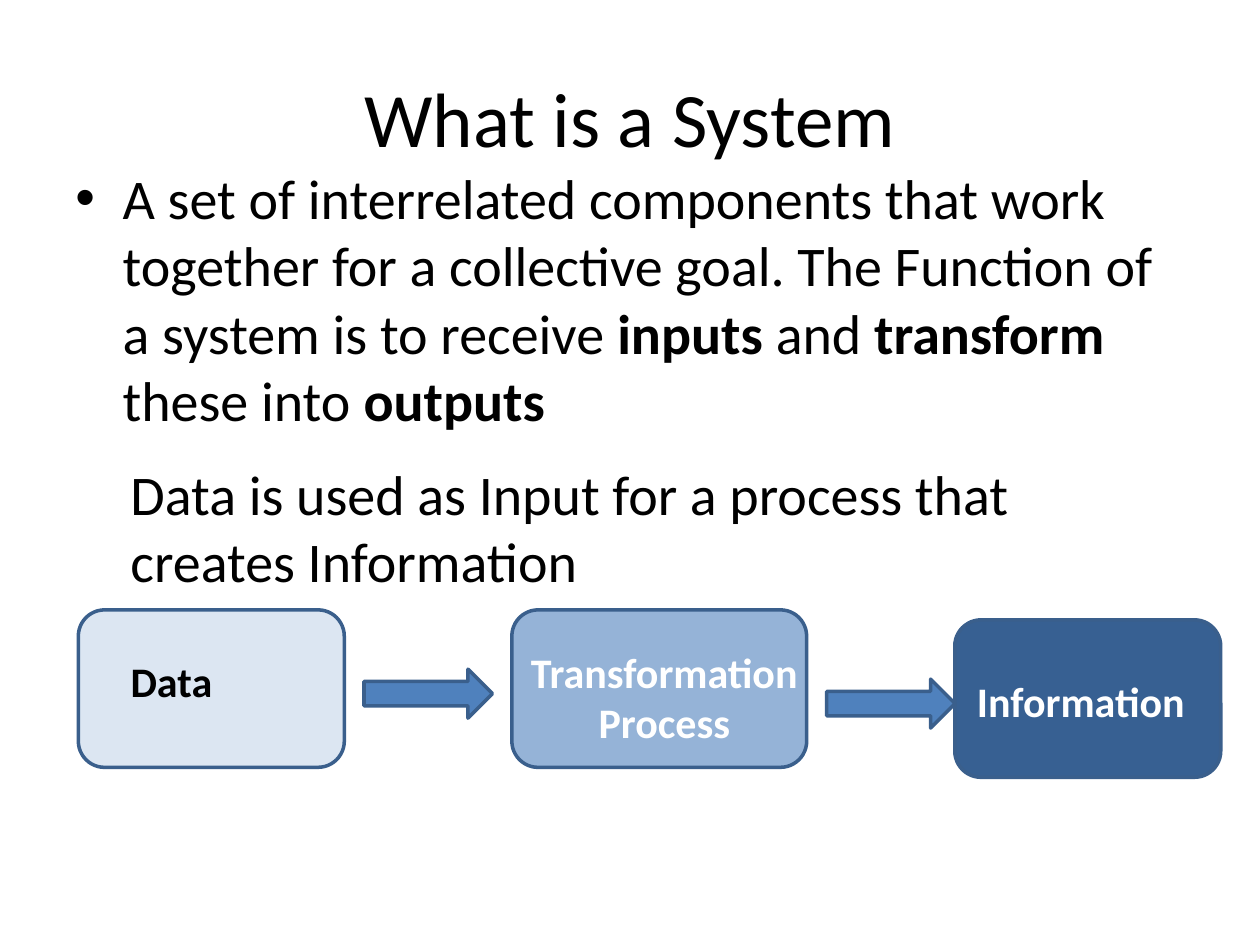
from dataclasses import dataclass

from lxml import etree
from pptx import Presentation
from pptx import util as u
from pptx.dml.color import RGBColor
from pptx.enum import shapes, text
from pptx.oxml.ns import qn

COLOURS = {
    "ink": "000000",
    "light": "FFFFFF",
    "outline": "3A5F8C",
    "arrow": "4F81BD",
    "data": "DCE6F2",
    "process": "95B3D7",
    "information": "376092",
}
LEFT, CENTRE = text.PP_ALIGN.LEFT, text.PP_ALIGN.CENTER
TOP, MIDDLE = text.MSO_ANCHOR.TOP, text.MSO_ANCHOR.MIDDLE
ROUNDED = shapes.MSO_SHAPE.ROUNDED_RECTANGLE
ARROW = shapes.MSO_SHAPE.RIGHT_ARROW


@dataclass(frozen=True)
class Box:
    """Position and size in points."""
    left: float
    top: float
    width: float
    height: float

    def lengths(self) -> list:
        return [u.Pt(v) for v in (self.left, self.top, self.width, self.height)]


@dataclass(frozen=True)
class Block:
    """Text block; every second phrase is bold when there are several."""
    box: Box
    phrases: tuple
    size: float
    colour: str = "ink"
    bold: bool = False
    align: text.PP_ALIGN = LEFT
    anchor: text.MSO_ANCHOR = TOP
    bullet_indent: float = 0


@dataclass(frozen=True)
class Figure:
    kind: shapes.MSO_SHAPE
    box: Box
    fill: str


FIGURES = (
    Figure(ROUNDED, Box(44.8, 348.5, 152, 90), "data"),
    Figure(ROUNDED, Box(292.5, 348.5, 168.5, 90), "process"),
    Figure(ROUNDED, Box(545.6, 354.2, 152, 90), "information"),
    Figure(ARROW, Box(208, 382.4, 73.4, 28), "arrow"),
    Figure(ARROW, Box(472.4, 388.1, 73.4, 28), "arrow"),
)

BLOCKS = (
    Block(Box(36, 21.6, 648, 90), ("What is a System",), 44,
          align=CENTRE, anchor=MIDDLE),
    Block(Box(36, 90, 648, 450),
          ("A set of interrelated components that work together for a collective "
           "goal. The Function of a system is to receive ",
           "inputs", " and ", "transform", " these into ", "outputs"),
          32, bullet_indent=27),
    Block(Box(67.5, 371.2, 112.5, 36.4), ("Data",), 24, bold=True),
    Block(Box(281.2, 365.6, 196.9, 65.4), ("Transformation Process",), 24,
          "light", True, CENTRE),
    Block(Box(551.2, 382.5, 146.2, 36.4), ("Information",), 24, "light", True),
    Block(Box(67.5, 258.8, 568, 106.6),
          ("Data is used as Input for a process that creates Information",), 32),
)


def rgb(name: str) -> RGBColor:
    return RGBColor.from_string(COLOURS[name])


def apply(target, formats: dict) -> None:
    for attribute, value in formats.items():
        setattr(target, attribute, value)


def draw_figure(slide, figure: Figure) -> None:
    shape = slide.shapes.add_shape(figure.kind, *figure.box.lengths())
    shape.shadow.inherit = False
    shape.fill.solid()
    shape.fill.fore_color.rgb = rgb(figure.fill)
    shape.line.color.rgb = rgb("outline")
    shape.line.width = u.Pt(2)


def add_bullet(paragraph, indent: float) -> None:
    properties = paragraph._p.get_or_add_pPr()
    properties.set("marL", str(u.Pt(indent)))
    properties.set("indent", str(-u.Pt(indent)))
    etree.SubElement(properties, qn("a:buFont"), typeface="Arial")
    etree.SubElement(properties, qn("a:buChar"), char="•")


def draw_block(slide, block: Block) -> None:
    frame = slide.shapes.add_textbox(*block.box.lengths()).text_frame
    apply(frame, {"word_wrap": True, "vertical_anchor": block.anchor})
    paragraph = frame.paragraphs[0]
    paragraph.alignment = block.align
    if block.bullet_indent:
        add_bullet(paragraph, block.bullet_indent)
    for index, phrase in enumerate(block.phrases):
        run = paragraph.add_run()
        run.text = phrase
        apply(run.font, {"name": "Calibri", "size": u.Pt(block.size),
                         "bold": block.bold or index % 2 == 1})
        run.font.color.rgb = rgb(block.colour)


def main() -> None:
    deck = Presentation()
    apply(deck, {"slide_width": u.Pt(720), "slide_height": u.Pt(540)})
    slide = deck.slides.add_slide(deck.slide_layouts[6])
    for figure in FIGURES:
        draw_figure(slide, figure)
    for block in BLOCKS:
        draw_block(slide, block)
    deck.save("out.pptx")


if __name__ == "__main__":
    main()
